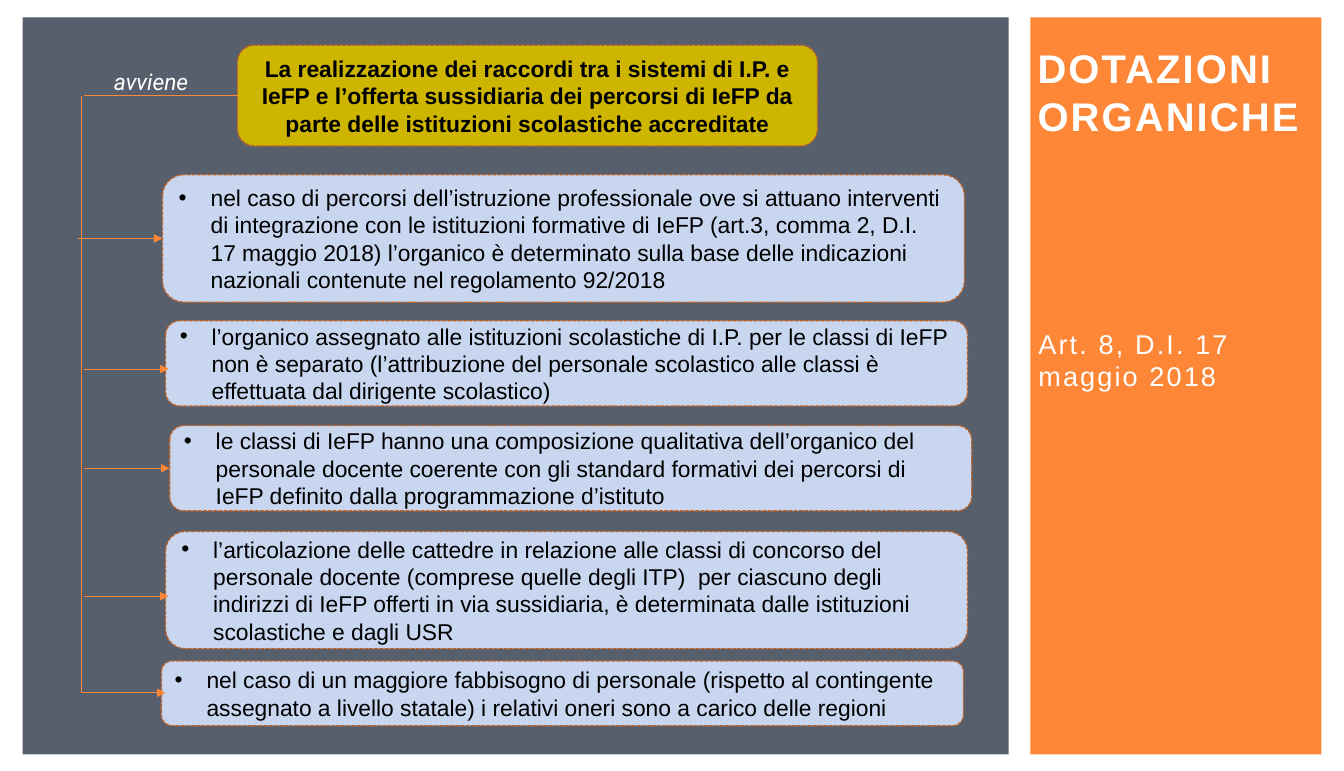
from pptx import Presentation
from pptx.dml.color import RGBColor
from pptx.enum.dml import MSO_LINE
from pptx.enum.shapes import MSO_CONNECTOR, MSO_SHAPE
from pptx.enum.text import MSO_ANCHOR, MSO_AUTO_SIZE, PP_ALIGN
from pptx.oxml.ns import qn
from pptx.util import Emu, Pt
from lxml.etree import SubElement

PX = 9144
WIDTH, HEIGHT = 1307, 750
ORANGE = RGBColor(0xFE, 0x86, 0x37)
SLATE = RGBColor(0x57, 0x5F, 0x6D)
MUSTARD = RGBColor(0xCE, 0xB5, 0x00)
PALE_BLUE = RGBColor(0xC8, 0xD6, 0xF0)
RUST = RGBColor(0xBC, 0x63, 0x29)
WHITE = RGBColor(0xFF, 0xFF, 0xFF)
BLACK = RGBColor(0x00, 0x00, 0x00)

PANELS = [((1002, 17, 283, 717), ORANGE), ((22, 17, 959, 717), SLATE)]
TITLE = ("DOTAZIONI ORGANICHE", (999, -11, 309, 200))
SUBTITLE = ("Art. 8, D.I. 17 maggio 2018", (1000, 265, 283, 170))
LABEL = ("avviene", (101, 61, 155, 37))
HEADING = (
    "La realizzazione dei raccordi tra i sistemi di I.P. e IeFP e l’offerta sussidiaria "
    "dei percorsi di IeFP da parte delle istituzioni scolastiche accreditate",
    (231, 44, 564, 98),
)
POINT_WIDTH = 780
POINTS = [
    {"left": 158, "top": 170, "height": 124, "arrow": (76, 233), "text":
     "nel caso di percorsi dell’istruzione professionale ove si attuano interventi di "
     "integrazione con le istituzioni formative di IeFP (art.3, comma 2, D.I. 17 maggio 2018) "
     "l’organico è determinato sulla base delle indicazioni nazionali contenute nel "
     "regolamento 92/2018"},
    {"left": 161, "top": 312, "height": 83, "arrow": (82, 359), "text":
     "l’organico assegnato alle istituzioni scolastiche di I.P. per le classi di IeFP non è "
     "separato (l’attribuzione del personale scolastico alle classi è effettuata dal "
     "dirigente scolastico)"},
    {"left": 165, "top": 414, "height": 83, "arrow": (82, 454), "text":
     "le classi di IeFP hanno una composizione qualitativa dell’organico del personale "
     "docente coerente con gli standard formativi dei percorsi di IeFP definito dalla "
     "programmazione d’istituto"},
    {"left": 161, "top": 517, "height": 114, "arrow": (82, 580), "text":
     "l’articolazione delle cattedre in relazione alle classi di concorso del personale "
     "docente (comprese quelle degli ITP)  per ciascuno degli indirizzi di IeFP offerti in "
     "via sussidiaria, è determinata dalle istituzioni scolastiche e dagli USR"},
    {"left": 157, "top": 643, "height": 63, "arrow": (79, 674), "text":
     "nel caso di un maggiore fabbisogno di personale (rispetto al contingente assegnato a "
     "livello statale) i relativi oneri sono a carico delle regioni"},
]
ARROW_LENGTH = 82
TRUNK_X, TRUNK_TOP, TRUNK_BOTTOM = 79, 93, 674
BRANCH_X = 82
JOIN_TOLERANCE = 2
BULLET_INDENT = 31

TITLE_FONT = {"name": "Arial", "size": Pt(28), "bold": True}
SUBTITLE_FONT = {"name": "Arial", "size": Pt(19)}
LABEL_FONT = {"name": "Roboto", "size": Pt(16), "italic": True}
HEADING_FONT = {"name": "Arial", "size": Pt(16), "bold": True}
POINT_FONT = {"name": "Arial", "size": Pt(16)}


def lengths(*values):
    """Turn px into EMU."""
    return [Emu(round(value * PX)) for value in values]


def set_values(target, values):
    """Set each named attribute on the target."""
    for name, value in values.items():
        setattr(target, name, value)


def write(box, text, font, color, align=PP_ALIGN.LEFT, anchor=MSO_ANCHOR.MIDDLE, spacing=None):
    """Put one formatted paragraph in the box."""
    set_values(box.text_frame, {"word_wrap": True, "auto_size": MSO_AUTO_SIZE.NONE,
                                "vertical_anchor": anchor})
    para = box.text_frame.paragraphs[0]
    para.alignment = align
    span = para.add_run()
    span.text = text
    set_values(span.font, font)
    span.font.color.rgb = color
    if spacing:
        for properties in box.element.iter(qn("a:rPr")):
            properties.set("spc", str(spacing))


def add_bullet(box):
    """Give the box's paragraph a hanging bullet."""
    for paragraph in box.element.iter(qn("a:p")):
        properties = paragraph.get_or_add_pPr()
        properties.set("marL", str(BULLET_INDENT * PX))
        properties.set("indent", str(-BULLET_INDENT * PX))
        SubElement(properties, qn("a:buFont")).set("typeface", "Arial")
        SubElement(properties, qn("a:buChar")).set("char", "•")


def add_block(page, preset, place, fill):
    """Add a filled shape without shadow or outline."""
    block = page.shapes.add_shape(preset, *lengths(*place))
    block.shadow.inherit = False
    block.fill.solid()
    block.fill.fore_color.rgb = fill
    block.line.fill.background()
    return block


def add_card(page, place, fill):
    """Add a rounded card with a dashed outline."""
    card = add_block(page, MSO_SHAPE.ROUNDED_RECTANGLE, place, fill)
    card.line.color.rgb = RUST
    set_values(card.line, {"width": Pt(0.9), "dash_style": MSO_LINE.SQUARE_DOT})
    for dash in card.element.iter(qn("a:prstDash")):
        dash.set("val", "sysDash")
    return card


def add_line(page, start, end, arrow=False):
    """Add a thin orange line, with an arrowhead if asked."""
    line = page.shapes.add_connector(MSO_CONNECTOR.STRAIGHT, *lengths(*start, *end))
    line.line.color.rgb = ORANGE
    line.line.width = Pt(0.75)
    if arrow:
        SubElement(line.line._get_or_add_ln(), qn("a:tailEnd")).set("type", "triangle")
    SubElement(line.element.spPr, qn("a:effectLst"))
    return line


def add_point(page, point):
    """Add a bulleted card and the arrow that leads to it."""
    left, top, height = point["left"], point["top"], point["height"]
    card = add_card(page, (left, top, POINT_WIDTH, height), PALE_BLUE)
    write(card, point["text"], POINT_FONT, BLACK)
    add_bullet(card)
    start, level = point["arrow"]
    end, middle = start + ARROW_LENGTH, top + height / 2
    joined = abs(end - left) <= JOIN_TOLERANCE and abs(level - middle) <= JOIN_TOLERANCE
    level = middle if joined else level
    arrow = add_line(page, (start, level), (end, level), arrow=True)
    if joined:
        arrow.end_connect(card, 1)


def main():
    """Build and save the slide."""
    deck = Presentation()
    deck.slide_width, deck.slide_height = lengths(WIDTH, HEIGHT)
    page = deck.slides.add_slide(deck.slide_layouts[5])
    for place, fill in PANELS:
        add_block(page, MSO_SHAPE.RECTANGLE, place, fill)

    text, place = TITLE
    title = page.shapes.title
    set_values(title, dict(zip(("left", "top", "width", "height"), lengths(*place))))
    write(title, text, TITLE_FONT, WHITE, spacing=150)
    page.shapes.element.append(title.element)

    text, place = SUBTITLE
    subtitle = page.shapes.add_textbox(*lengths(*place))
    write(subtitle, text, SUBTITLE_FONT, WHITE, spacing=150)

    text, place = HEADING
    heading = add_card(page, place, MUSTARD)
    write(heading, text, HEADING_FONT, BLACK, align=PP_ALIGN.CENTER)
    branch = add_line(page, (place[0], TRUNK_TOP), (BRANCH_X, TRUNK_TOP))
    branch.begin_connect(heading, 1)
    add_line(page, (TRUNK_X, TRUNK_TOP), (TRUNK_X, TRUNK_BOTTOM))

    text, place = LABEL
    label = page.shapes.add_textbox(*lengths(*place))
    write(label, text, LABEL_FONT, WHITE, anchor=MSO_ANCHOR.TOP)

    for point in POINTS:
        add_point(page, point)
    deck.save("out.pptx")


if __name__ == "__main__":
    main()
